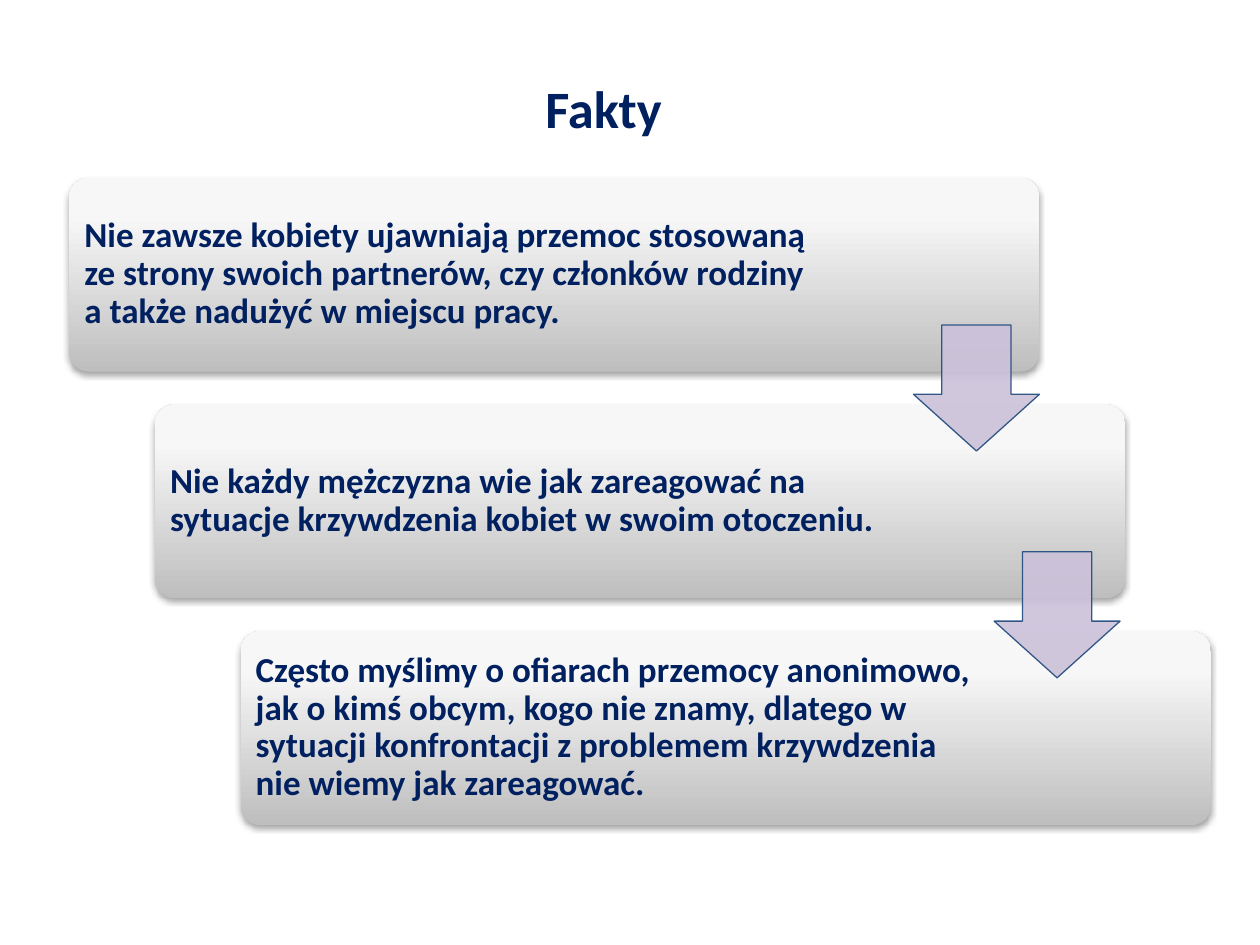
from dataclasses import dataclass

from lxml.etree import SubElement
from pptx import Presentation
from pptx.dml.color import RGBColor
from pptx.enum.shapes import MSO_SHAPE as Shape
from pptx.enum.text import MSO_ANCHOR as Anchor, PP_ALIGN as Align
from pptx.oxml import parse_xml
from pptx.oxml.ns import nsdecls, qn
from pptx.util import Inches, Pt


@dataclass(frozen=True)
class Theme:
    font: str = "Calibri"
    title_size: int = 30
    body_size: int = 20
    ink: str = "002060"
    arrow_fill: str = "CCC1DA"
    arrow_line: str = "1F497D"
    arrow_opacity: int = 90
    card_stops: tuple = ((0, "BEBEBE"), (80, "F7F7F7"), (100, "F8F8F8"))


THEME = Theme()

# Staircase of cards: first position, step to the next one, card size
LEFT, TOP = 0.55, 1.41
STEP_X, STEP_Y = 0.68, 1.8
CARD_W, CARD_H = 7.7, 1.54
ARROW_SIZE = 1

# Text and text width of each card
FACTS = (
    ("Nie zawsze kobiety ujawniają przemoc stosowaną ze strony swoich "
     "partnerów, czy członków rodziny a także nadużyć w miejscu pracy.", 6.04),
    ("Nie każdy mężczyzna wie jak zareagować na sytuacje krzywdzenia kobiet "
     "w swoim otoczeniu.", 5.93),
    ("Często myślimy o ofiarach przemocy anonimowo, jak o kimś obcym, kogo "
     "nie znamy, dlatego w sytuacji konfrontacji z problemem krzywdzenia "
     "nie wiemy jak zareagować.", 5.93),
)


def add_text(page, text, left, top, width, height, *, size,
             align=Align.LEFT, spacing=1.0, inset=0.08):
    box = page.shapes.add_textbox(
        Inches(left), Inches(top), Inches(width), Inches(height))
    frame = box.text_frame
    frame.word_wrap = True
    frame.vertical_anchor = Anchor.MIDDLE
    frame.margin_left = frame.margin_right = Inches(inset)
    frame.margin_top = frame.margin_bottom = Inches(inset)
    para = frame.paragraphs[0]
    para.alignment = align
    para.line_spacing = spacing
    span = para.add_run()
    span.text = text
    span.font.name = THEME.font
    span.font.size = Pt(size)
    span.font.bold = True
    span.font.color.rgb = RGBColor.from_string(THEME.ink)


def add_card(page, left, top):
    card = page.shapes.add_shape(
        Shape.ROUNDED_RECTANGLE,
        Inches(left), Inches(top), Inches(CARD_W), Inches(CARD_H))
    card.adjustments[0] = 0.1
    card.line.fill.background()
    card.shadow.inherit = False

    # Three-stop gradient running from the bottom edge upwards
    card.fill.gradient()
    stops = "".join(
        f'<a:gs pos="{pos * 1000}"><a:srgbClr val="{color}"/></a:gs>'
        for pos, color in THEME.card_stops)
    gradient = card._element.spPr.find(qn("a:gradFill"))
    gradient.replace(
        gradient.find(qn("a:gsLst")),
        parse_xml(f'<a:gsLst {nsdecls("a")}>{stops}</a:gsLst>'))
    gradient.find(qn("a:lin")).set("ang", str(270 * 60000))

    # Soft shadow straight below
    card._element.spPr.find(qn("a:effectLst")).append(parse_xml(
        f'<a:outerShdw {nsdecls("a")} blurRad="{Pt(3.1)}" dist="{Pt(1.8)}" '
        'dir="5400000" rotWithShape="0"><a:srgbClr val="000000">'
        '<a:alpha val="35000"/></a:srgbClr></a:outerShdw>'))


def add_arrow(page, left, top):
    arrow = page.shapes.add_shape(
        Shape.DOWN_ARROW, Inches(left), Inches(top),
        Inches(ARROW_SIZE), Inches(ARROW_SIZE))
    arrow.adjustments[0] = 0.55
    arrow.adjustments[1] = 0.45
    arrow.shadow.inherit = False
    arrow.fill.solid()
    arrow.fill.fore_color.rgb = RGBColor.from_string(THEME.arrow_fill)
    arrow.line.color.rgb = RGBColor.from_string(THEME.arrow_line)
    arrow.line.width = Pt(0.75)
    for color in arrow._element.spPr.iter(qn("a:srgbClr")):
        SubElement(color, qn("a:alpha")).set(
            "val", str(THEME.arrow_opacity * 1000))


def main():
    deck = Presentation()
    deck.slide_width, deck.slide_height = Inches(10), Inches(7.5)
    page = deck.slides.add_slide(deck.slide_layouts[6])

    # Cards with their text
    for i, (fact, text_width) in enumerate(FACTS):
        left, top = LEFT + i * STEP_X, TOP + i * STEP_Y
        add_card(page, left, top)
        add_text(page, fact, left + 0.04, top + 0.04, text_width, 1.45,
                 size=THEME.body_size, spacing=0.9)

    # Arrows from each card to the next
    for i in range(len(FACTS) - 1):
        add_arrow(page, 7.25 + i * 0.64, 2.58 + i * STEP_Y)

    # Title
    add_text(page, "Fakty", 2.5, 0.23, 4.58, 1.25,
             size=THEME.title_size, align=Align.CENTER)

    deck.save("out.pptx")


if __name__ == "__main__":
    main()
